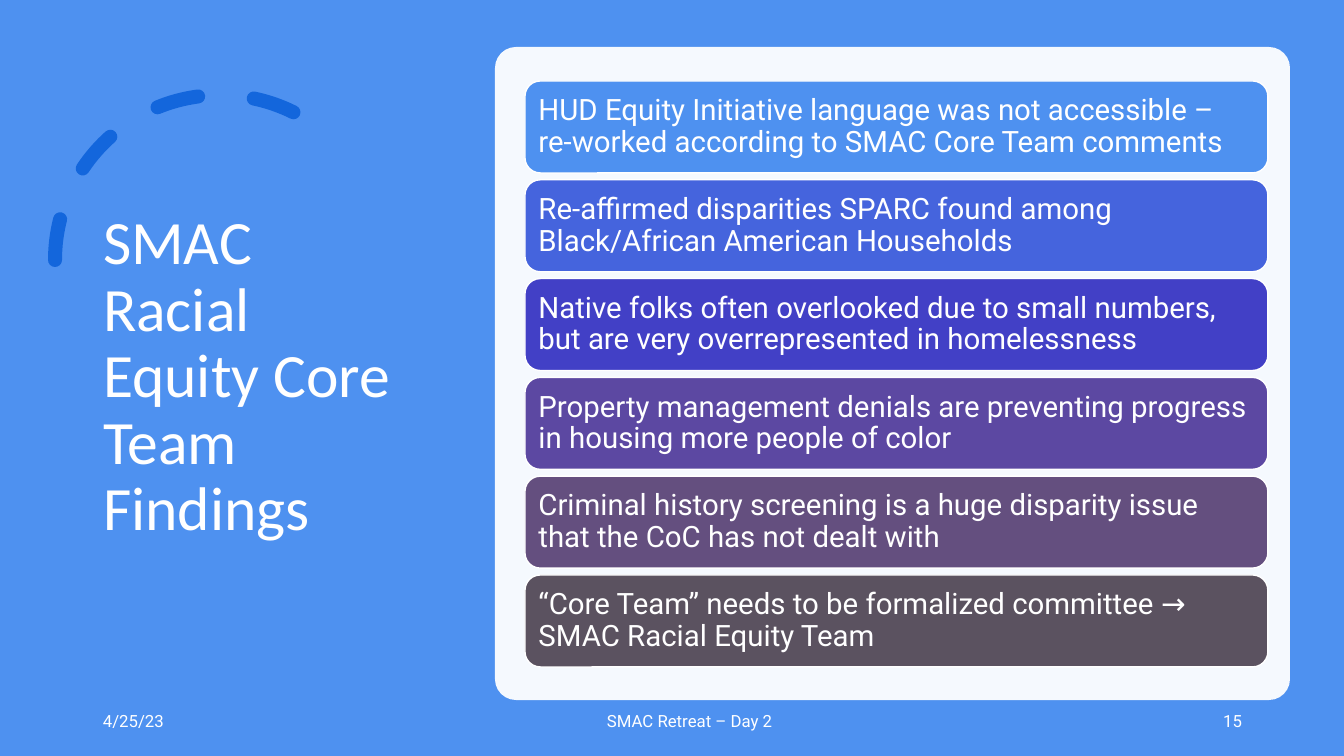
from lxml import etree
from pptx import Presentation
from pptx.dml.color import RGBColor
from pptx.enum.dml import MSO_LINE
from pptx.enum.shapes import MSO_SHAPE
from pptx.enum.text import MSO_ANCHOR, MSO_AUTO_SIZE, PP_ALIGN
from pptx.oxml.ns import qn
from pptx.util import Emu, Pt

RECT, ROUND, ARC = MSO_SHAPE.RECTANGLE, MSO_SHAPE.ROUNDED_RECTANGLE, MSO_SHAPE.ARC
LEFT, RIGHT = PP_ALIGN.LEFT, PP_ALIGN.RIGHT
MIDDLE, FIXED = MSO_ANCHOR.MIDDLE, MSO_AUTO_SIZE.NONE
DASH = MSO_LINE.DASH

WIDE, HIGH = 1344, 756
SCALE = 12192000 / WIDE
BLUE, NAVY, WHITE = "4E91F0", "1366DC", "FFFFFF"

FINDINGS = [
    ("HUD Equity Initiative language was not accessible – "
     "re-worked according to SMAC Core Team comments", BLUE),
    ("Re-affirmed disparities SPARC found among "
     "Black/African American Households", "4564DD"),
    ("Native folks often overlooked due to small numbers, "
     "but are very overrepresented in homelessness", "4240C6"),
    ("Property management denials are preventing progress "
     "in housing more people of color", "5C48A2"),
    ("Criminal history screening is a huge disparity issue "
     "that the CoC has not dealt with", "644F7F"),
    ("“Core Team” needs to be formalized committee → "
     "SMAC Racial Equity Team", "5B5260"),
]


def px(n):
    return Emu(round(n * SCALE))


def color(code):
    return RGBColor.from_string(code)


def write(shape, text, size, font="Roboto", align=LEFT, space=1.0, pad=None):
    frame = shape.text_frame
    frame.word_wrap = True
    frame.auto_size = FIXED
    frame.vertical_anchor = MIDDLE
    if pad is not None:
        frame.margin_left = frame.margin_right = px(pad)
        frame.margin_top = frame.margin_bottom = px(pad)
    para = frame.paragraphs[0]
    para.alignment = align
    para.line_spacing = space
    run = para.add_run()
    run.text = text
    run.font.name = font
    run.font.size = Pt(size)
    run.font.color.rgb = color(WHITE)


def draw(slide, kind, box, fill=None, line=None, weight=1):
    shape = slide.shapes.add_shape(kind, *map(px, box))
    shape.shadow.inherit = False
    if fill:
        shape.fill.solid()
        shape.fill.fore_color.rgb = color(fill)
    else:
        shape.fill.background()
    if line:
        shape.line.color.rgb = color(line)
        shape.line.width = Pt(weight)
    else:
        shape.line.fill.background()
    return shape


def add_arc(slide, box):
    arc = draw(slide, ARC, box, line=NAVY, weight=10)
    arc.adjustments[0] = 146.129
    arc.adjustments[1] = 0
    arc.line.dash_style = DASH
    arc.line._get_or_add_ln().set("cap", "rnd")
    arc._element.spPr.xfrm.set("flipH", "1")


def add_title(slide, box):
    title = slide.shapes.title
    title.left, title.top, title.width, title.height = map(px, box)
    write(title, "SMAC Racial Equity Core Team Findings", 44,
          font="Calibri", space=0.9)
    # Bring the title in front of the backdrop
    slide.shapes._spTree.append(title._element)


def add_panel(slide, box):
    x, y, w, h = box
    panel = draw(slide, ROUND, box, WHITE)
    panel.adjustments[0] = 0.032
    tint = panel._element.spPr.find(qn("a:solidFill"))[0]
    etree.SubElement(tint, qn("a:alpha")).set("val", "95000")

    # Bars spread evenly down the panel
    bar, top, span = 92, y + 34, h - 67
    step = (span - bar) / (len(FINDINGS) - 1)
    for i, (text, fill) in enumerate(FINDINGS):
        item = draw(slide, ROUND, (x + 30, top + i * step, w - 52, bar),
                    fill, line=WHITE)
        write(item, text, 21, space=0.9, pad=9)


def add_footer(slide, box):
    x, y, w, h = box
    part = 302
    for left, text, align in (
        (x, "4/25/23", LEFT),
        (x + 504, "SMAC Retreat – Day 2", LEFT),
        (x + w - part, "15", RIGHT),
    ):
        note = slide.shapes.add_textbox(*map(px, (left, y, part, h)))
        write(note, text, 12, align=align)


def main():
    deck = Presentation()
    deck.slide_width, deck.slide_height = px(WIDE), px(HIGH)
    slide = deck.slides.add_slide(deck.slide_layouts[5])

    draw(slide, RECT, (0, 0, WIDE, HIGH), BLUE)
    add_arc(slide, (55, 95, 330, 330))
    add_title(slide, (93, 71, 320, 614))
    add_panel(slide, (495, 47, 795, 653))
    add_footer(slide, (93, 701, 1159, 40))

    deck.save("out.pptx")


if __name__ == "__main__":
    main()
